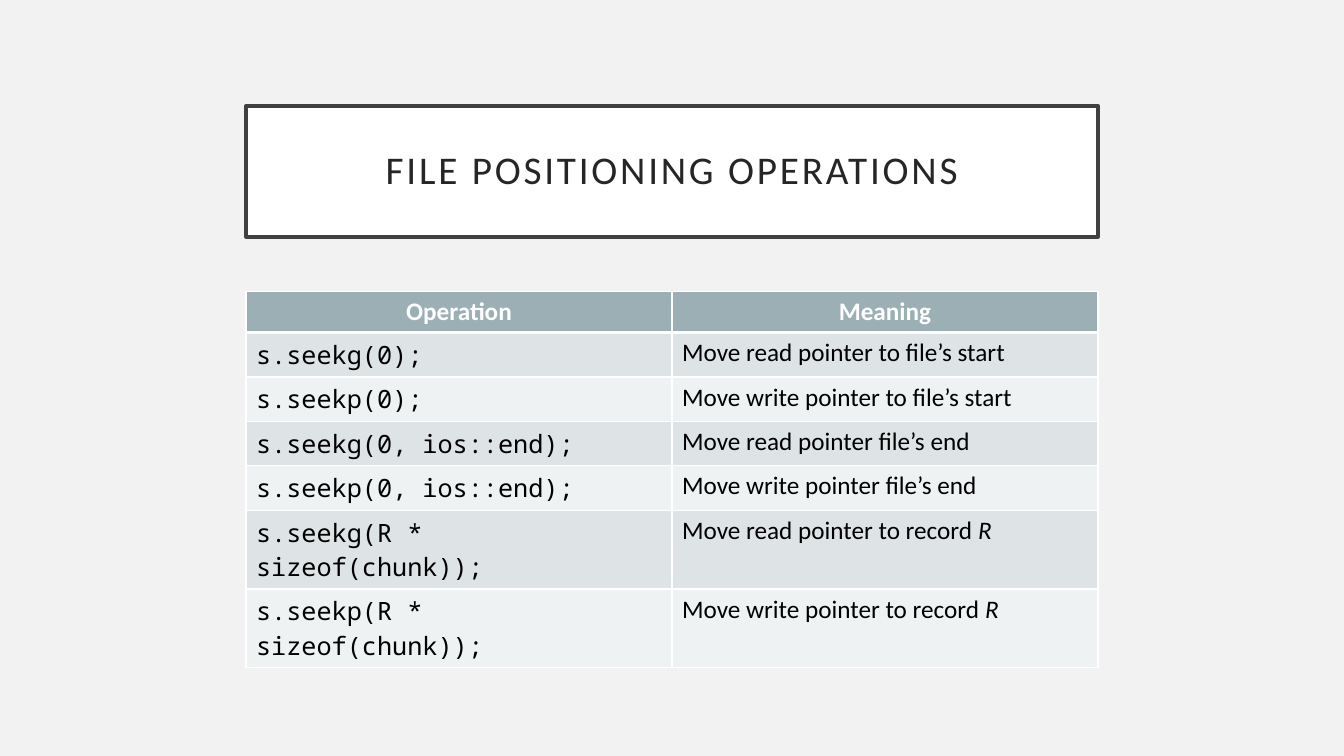
from lxml import etree
from pptx import Presentation
from pptx.dml.color import RGBColor
from pptx.enum.shapes import MSO_SHAPE as Shape
from pptx.enum.text import MSO_ANCHOR as Anchor, PP_ALIGN as Align
from pptx.oxml.ns import qn
from pptx.util import Inches, Pt

BACKGROUND = RGBColor(0xF2, 0xF2, 0xF2)
WHITE = RGBColor(0xFF, 0xFF, 0xFF)
BLACK = RGBColor(0, 0, 0)
TITLE_TEXT = RGBColor(0x26, 0x26, 0x26)
TITLE_LINE = RGBColor(0x40, 0x40, 0x40)
HEADER_FILL = RGBColor(0x9B, 0xAF, 0xB5)
BAND_FILLS = (RGBColor(0xDE, 0xE3, 0xE5), RGBColor(0xEF, 0xF2, 0xF3))

TEXT_FONT = "Calibri"
CODE_FONT = "Noto Sans Mono"
LEFT, WIDTH = 2.44, 8.45
ROW_HEIGHT = 0.41

HEADINGS = ("Operation", "Meaning")
# Code, meaning, and the record name set in italics
OPERATIONS = (
    ("s.seekg(0);", "Move read pointer to file’s start", ""),
    ("s.seekp(0);", "Move write pointer to file’s start", ""),
    ("s.seekg(0, ios::end);", "Move read pointer file’s end", ""),
    ("s.seekp(0, ios::end);", "Move write pointer file’s end", ""),
    ("s.seekg(R * sizeof(chunk));", "Move read pointer to record ", "R"),
    ("s.seekp(R * sizeof(chunk));", "Move write pointer to record ", "R"),
)


def add_run(paragraph, text, color, **font_format):
    run = paragraph.add_run()
    run.text = text
    values = {"name": TEXT_FONT, "size": Pt(18), "bold": False, **font_format}
    for name, value in values.items():
        setattr(run.font, name, value)
    run.font.color.rgb = color
    return run


def add_title(slide, text):
    box = slide.shapes.add_shape(
        Shape.RECTANGLE, Inches(LEFT), Inches(1.05), Inches(WIDTH), Inches(1.3))
    box.shadow.inherit = False
    box.fill.solid()
    box.fill.fore_color.rgb = WHITE
    box.line.color.rgb = TITLE_LINE
    box.line.width = Pt(2.5)
    frame = box.text_frame
    frame.word_wrap = True
    frame.vertical_anchor = Anchor.MIDDLE
    for side in ("left", "top", "right", "bottom"):
        setattr(frame, f"margin_{side}", Inches(0.2))
    paragraph = frame.paragraphs[0]
    paragraph.alignment = Align.CENTER
    paragraph.line_spacing = 0.9
    run = add_run(paragraph, text, TITLE_TEXT, size=Pt(28))
    # Letter spacing, in hundredths of a point
    run._r.get_or_add_rPr().set("spc", "200")


def style_cell(cell, fill, top=1, bottom=1):
    # Borders come before the fill in the cell properties
    properties = cell._tc.get_or_add_tcPr()
    for tag, width in {"lnL": 1, "lnR": 1, "lnT": top, "lnB": bottom}.items():
        line = etree.SubElement(properties, qn(f"a:{tag}"), w=str(Pt(width)))
        solid = etree.SubElement(line, qn("a:solidFill"))
        etree.SubElement(solid, qn("a:srgbClr"), val=str(WHITE))
    cell.fill.solid()
    cell.fill.fore_color.rgb = fill


def add_operations_table(slide):
    row_count = len(OPERATIONS) + 1
    table = slide.shapes.add_table(
        row_count, len(HEADINGS), Inches(LEFT), Inches(2.89),
        Inches(WIDTH), Inches(ROW_HEIGHT * row_count)).table

    # Header row
    for column, heading in enumerate(HEADINGS):
        cell = table.cell(0, column)
        style_cell(cell, HEADER_FILL, bottom=3)
        paragraph = cell.text_frame.paragraphs[0]
        paragraph.alignment = Align.CENTER
        add_run(paragraph, heading, WHITE, bold=True)

    # Banded rows
    for row, (code, meaning, record) in enumerate(OPERATIONS, start=1):
        cells = table.cell(row, 0), table.cell(row, 1)
        for cell in cells:
            style_cell(cell, BAND_FILLS[(row - 1) % 2], top=3 if row == 1 else 1)
        code_paragraph, meaning_paragraph = (
            cell.text_frame.paragraphs[0] for cell in cells)
        add_run(code_paragraph, code, BLACK, name=CODE_FONT)
        add_run(meaning_paragraph, meaning, BLACK)
        if record:
            add_run(meaning_paragraph, record, BLACK, italic=True)


def main():
    presentation = Presentation()
    presentation.slide_width = Inches(13.33)
    presentation.slide_height = Inches(7.5)
    slide = presentation.slides.add_slide(presentation.slide_layouts[6])
    slide.background.fill.solid()
    slide.background.fill.fore_color.rgb = BACKGROUND
    add_title(slide, "FILE POSITIONING OPERATIONS")
    add_operations_table(slide)
    presentation.save("out.pptx")


if __name__ == "__main__":
    main()
